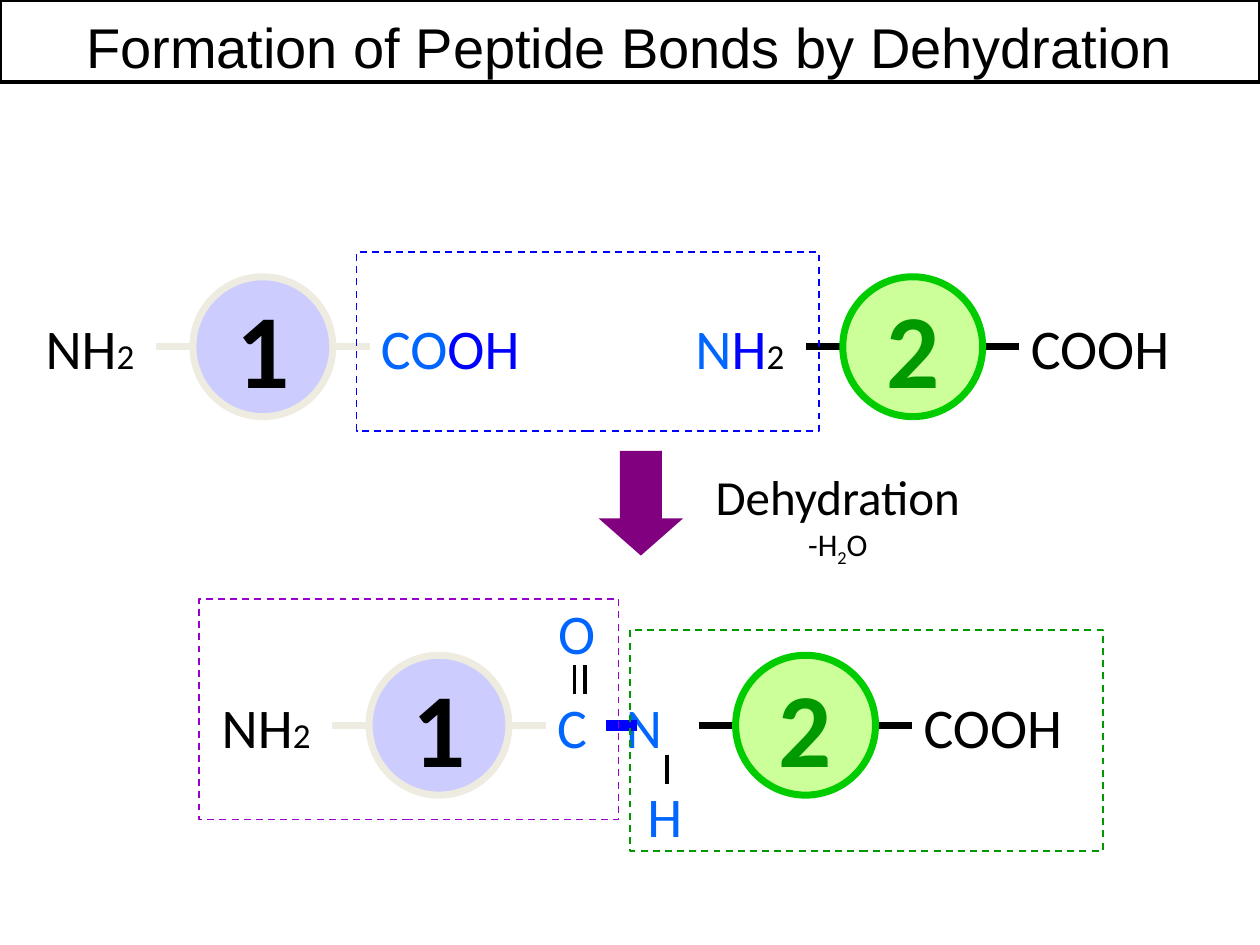
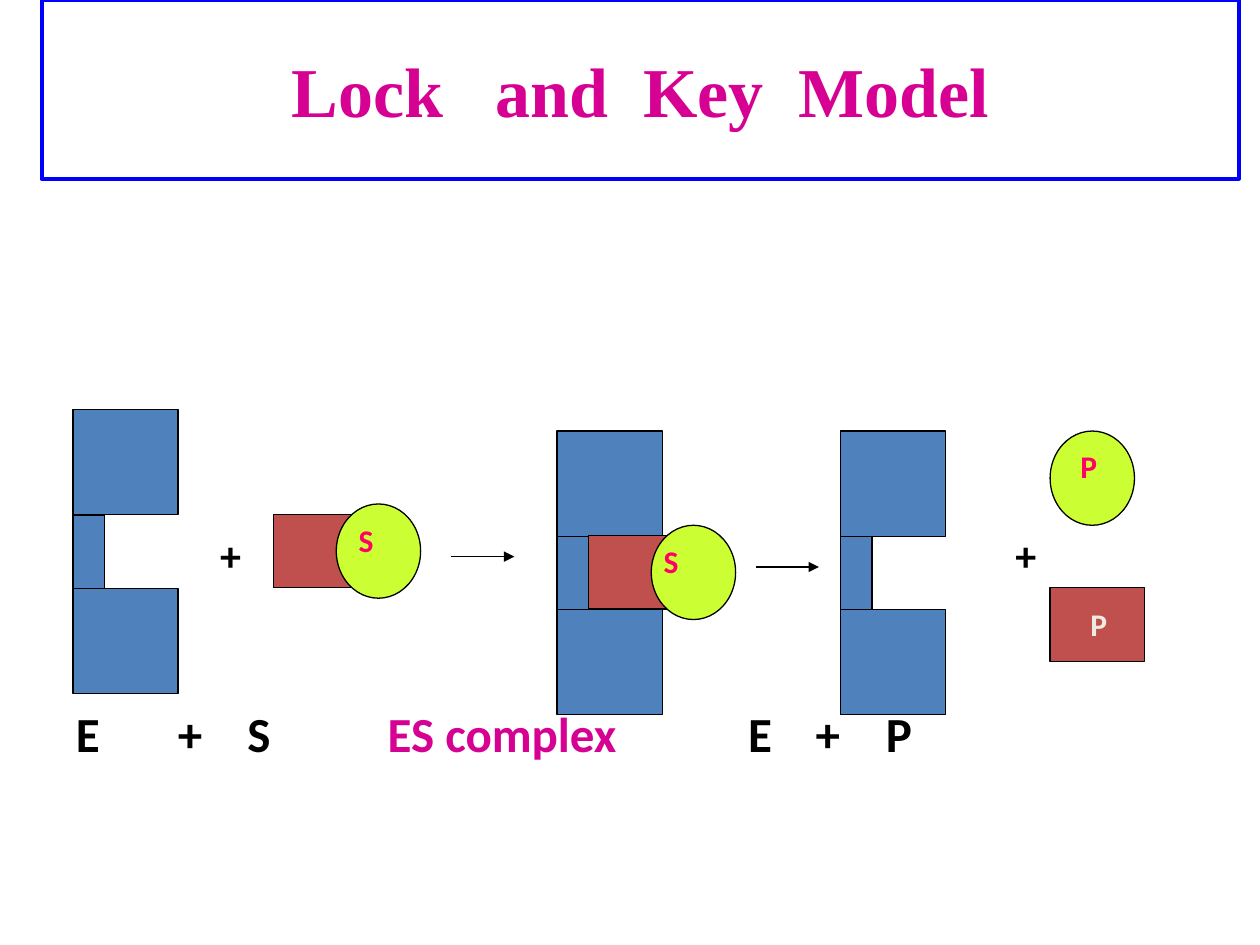
from dataclasses import dataclass

import pptx
import pptx.dml.color
import pptx.enum.dml
import pptx.enum.shapes
import pptx.enum.text
import pptx.oxml.ns
import pptx.util
from lxml import etree
from pptx.util import Cm

SHAPES = pptx.enum.shapes.MSO_SHAPE
ALIGN = pptx.enum.text.PP_ALIGN
ANCHOR = pptx.enum.text.MSO_ANCHOR
qn = pptx.oxml.ns.qn


@dataclass(frozen=True)
class Theme:
    black: str = "000000"
    white: str = "FFFFFF"
    ivory: str = "EEECE1"
    blue: str = "0000FF"
    sky: str = "0066FF"
    lavender: str = "CCCCFF"
    lime: str = "CCFF99"
    bright_green: str = "00CC00"
    green: str = "009900"
    violet: str = "9900CC"
    purple: str = "800080"
    magenta: str = "D60093"
    pink: str = "FF0066"
    enzyme: str = "4F81BD"
    substrate: str = "C0504D"
    yellow: str = "CCFF33"
    body_font: str = "Calibri"
    plain_title_font: str = "Arial"
    serif_title_font: str = "Times New Roman"
    residue_size: int = 60
    model_title_size: int = 40
    large: int = 32
    label: int = 28
    sign: int = 24
    index: int = 20
    small: int = 18


THEME = Theme()


def rgb(color):
    return pptx.dml.color.RGBColor.from_string(color)


def write(paragraph, text, *, size, color=THEME.black, font=THEME.body_font,
          bold=False, baseline=None, spacing=None):
    """Add one formatted run; baseline is in 1/1000 %, spacing in points."""
    run = paragraph.add_run()
    run.text = text
    run.font.size = pptx.util.Pt(size)
    run.font.name = font
    run.font.bold = bold
    run.font.color.rgb = rgb(color)
    if baseline is not None:
        run.font._element.set("baseline", str(baseline))
    if spacing is not None:
        run.font._element.set("spc", str(spacing * 100))


class Deck:
    """Holds the theme and the current slide. All lengths are in centimetres."""

    def __init__(self, theme):
        self.theme = theme
        self.prs = pptx.Presentation()
        self.prs.slide_width, self.prs.slide_height = Cm(25.4), Cm(19.05)
        self.slide = None

    def new_slide(self):
        self.slide = self.prs.slides.add_slide(self.prs.slide_layouts[6])

    def shape(self, kind, left, top, width, height, fill=None, line=None,
              weight=0.75, dashed=False):
        item = self.slide.shapes.add_shape(
            kind, Cm(left), Cm(top), Cm(width), Cm(height))
        item.shadow.inherit = False
        if fill:
            item.fill.solid()
            item.fill.fore_color.rgb = rgb(fill)
        else:
            item.fill.background()
        if line:
            item.line.color.rgb = rgb(line)
            item.line.width = pptx.util.Pt(weight)
        else:
            item.line.fill.background()
        if dashed:
            item.line.dash_style = pptx.enum.dml.MSO_LINE.DASH
        return item

    def line(self, x1, y1, x2, y2, color, weight, arrow=False):
        item = self.slide.shapes.add_connector(
            pptx.enum.shapes.MSO_CONNECTOR.STRAIGHT, Cm(x1), Cm(y1), Cm(x2), Cm(y2))
        item.line.color.rgb = rgb(color)
        item.line.width = pptx.util.Pt(weight)
        if arrow:
            etree.SubElement(item.line._get_or_add_ln(), qn("a:tailEnd"), type="triangle")
        etree.SubElement(item._element.spPr, qn("a:effectLst"))

    def paragraph(self, item, align=ALIGN.LEFT, anchor=ANCHOR.TOP, wrap=True):
        """Prepare the first paragraph of a shape or text box."""
        frame = item.text_frame
        frame.word_wrap = wrap
        frame.vertical_anchor = anchor
        frame.paragraphs[0].alignment = align
        return frame.paragraphs[0]

    def text(self, left, top, width, height, *runs, align=ALIGN.LEFT,
             anchor=ANCHOR.TOP):
        """Add a text box; each run is a text and its format."""
        box = self.slide.shapes.add_textbox(Cm(left), Cm(top), Cm(width), Cm(height))
        paragraph = self.paragraph(box, align, anchor)
        for text, form in runs:
            write(paragraph, text, **form)
        return box

    def centered(self, x, y, width, text, **form):
        """Add a one-line label centred on a point."""
        self.text(x - width / 2, y - 0.65, width, 1.3, (text, form),
                  align=ALIGN.CENTER, anchor=ANCHOR.MIDDLE)

    # Peptide chain parts
    def formula(self, left, top, width, *parts):
        """Add a chemical formula; each part is text, colour and optional size."""
        runs = [(text, dict(color=color, size=size[0] if size else self.theme.large))
                for text, color, *size in parts]
        self.text(left, top, width, 1.6, *runs)

    def residue(self, number, x, y, fill, outline, ink, bond):
        radius, reach = 1.41, 2.15
        self.line(x - reach, y, x + reach, y, bond, 4)
        circle = self.shape(SHAPES.OVAL, x - radius, y - radius, 2 * radius,
                            2 * radius, fill, outline, 4)
        write(self.paragraph(circle, ALIGN.CENTER, ANCHOR.MIDDLE, wrap=False), number,
              size=self.theme.residue_size, color=ink, bold=True)

    def amino_acid(self, residue, x, y, amine=None, acid=None):
        """Draw a residue with the groups at its left and right ends."""
        self.residue(*residue[:1], x, y, *residue[1:])
        if amine:
            self.formula(x - 4.63, y - 0.79, 2.51, *amine)
        if acid:
            self.formula(x + 2.13, y - 0.79, 3.89, *acid)

    # Enzyme model parts
    def enzyme(self, left, top):
        side, site_width, site_height = 2.12, 0.64, 1.48
        fill, edge = self.theme.enzyme, self.theme.black
        for y in (top, top + side + site_height):
            self.shape(SHAPES.RECTANGLE, left, y, side, side, fill, edge)
        self.shape(SHAPES.RECTANGLE, left, top + side, site_width, site_height, fill, edge)

    def block(self, left, top):
        self.shape(SHAPES.RECTANGLE, left, top, 1.9, 1.48,
                   self.theme.substrate, self.theme.black)

    def knob(self, left, top):
        self.shape(SHAPES.OVAL, left, top, 1.7, 1.9, self.theme.yellow, self.theme.black)

    def tag(self, left, top, text, color):
        self.text(left, top, 1.07, 1.27,
                  (text, dict(size=self.theme.small, color=color, bold=True)))

    def substrate(self, left, top, tag_shift):
        self.block(left, top)
        self.knob(left + 1.27, top - 0.21)
        self.tag(left + tag_shift, top, "S", self.theme.pink)


def peptide_slide(deck):
    t = deck.theme
    deck.new_slide()

    # Title band
    band = deck.shape(SHAPES.RECTANGLE, 0, 0, 25.4, 1.65, t.white, t.black, 2)
    heading = deck.paragraph(band, ALIGN.CENTER)
    heading.line_spacing = 1.1
    write(heading, "Formation of Peptide Bonds by Dehydration",
          size=t.large, font=t.plain_title_font)

    # Two separate amino acids, then the dipeptide
    first = ("1", t.lavender, t.ivory, t.black, t.ivory)
    second = ("2", t.lime, t.bright_green, t.green, t.black)
    amine = [("NH", t.black), ("2", t.black, t.index)]
    acid = [("COOH", t.black)]
    reacting_acid = [("CO", t.sky), ("OH", t.blue)]
    reacting_amine = [("N", t.sky), ("H", t.blue), ("2", t.black, t.index)]
    reactants_y, product_y = 6.99, 14.62
    deck.amino_acid(first, 5.3, reactants_y, amine, reacting_acid)
    deck.amino_acid(second, 18.4, reactants_y, reacting_amine, acid)
    deck.amino_acid(second, 16.24, product_y, acid=acid)
    deck.amino_acid(first, 8.85, product_y, amine, [("C", t.sky)])

    # Atoms and bonds of the peptide link
    for atom, left, top in (("N", 12.37, 13.83), ("O", 11, 11.94), ("H", 12.8, 15.62)):
        deck.formula(left, top, 1.37, (atom, t.sky))
    deck.line(12.22, product_y, 12.85, product_y, t.blue, 6)
    for x, top, weight in ((11.58, 13.41, 2), (11.79, 13.41, 2), (13.44, 15.21, 2.25)):
        deck.line(x, top, x, top + 0.59, t.black, weight)

    # Dashed frames
    for left, top, width, height, color in (
            (7.19, 5.08, 9.32, 3.61, t.blue),
            (4.01, 12.07, 8.46, 4.45, t.violet),
            (12.7, 12.7, 9.53, 4.45, t.green)):
        deck.shape(SHAPES.RECTANGLE, left, top, width, height, None, color, 1, True)

    # Reaction step
    arrow = deck.shape(SHAPES.DOWN_ARROW, 12.07, 9.09, 1.7, 2.11, t.purple)
    arrow.adjustments[0], arrow.adjustments[1] = 0.5, 0.44
    step = deck.text(13.97, 9.27, 5.84, 2.46, ("Dehydration", dict(size=t.label)),
                     align=ALIGN.CENTER)
    loss = step.text_frame.add_paragraph()
    loss.alignment = ALIGN.CENTER
    for text, baseline in (("-H", None), ("2", -25000), ("O", None)):
        write(loss, text, size=t.small, baseline=baseline)


def lock_and_key_slide(deck):
    t = deck.theme
    deck.new_slide()

    # Title frame, with widened word gaps
    frame = deck.shape(SHAPES.RECTANGLE, 0.84, 0, 24.13, 3.61, None, t.blue, 2.25)
    heading = deck.paragraph(frame, ALIGN.CENTER, ANCHOR.MIDDLE)
    for text, spacing in (("Lock", None), (" ", 20), ("and", None), (" ", 10),
                          ("Key", None), (" ", 10), ("Model", None)):
        write(heading, text, size=t.model_title_size, color=t.magenta,
              font=t.serif_title_font, bold=True, spacing=spacing)

    # Plus signs and the equation below the drawing
    for x in (4.65, 20.68):
        deck.centered(x, 11.19, 1.5, "+", size=t.sign, bold=True)
    for x, text in ((1.77, "E"), (3.83, "+"), (5.22, "S"),
                    (15.32, "E"), (16.69, "+"), (18.12, "P")):
        deck.centered(x, 14.77, 1.5, text, size=t.label, bold=True)
    deck.centered(10.12, 14.77, 6, "ES complex", size=t.label, color=t.magenta, bold=True)

    # Enzyme and substrate, complex, free enzyme
    for left, top in ((1.47, 8.26), (11.23, 8.69), (16.94, 8.69)):
        deck.enzyme(left, top)
    deck.substrate(5.51, 10.37, 1.47)
    deck.substrate(11.86, 10.8, 1.27)

    # Products
    deck.block(21.17, 11.85)
    deck.tag(21.73, 12.07, "P", t.ivory)
    deck.knob(21.17, 8.69)
    deck.tag(21.53, 8.89, "P", t.pink)

    # Reaction arrows
    for left, y in ((9.1, 11.22), (15.24, 11.43)):
        deck.line(left, y, left + 1.27, y, t.black, 0.75, arrow=True)


def main():
    deck = Deck(THEME)
    peptide_slide(deck)
    lock_and_key_slide(deck)
    deck.prs.save("out.pptx")


if __name__ == "__main__":
    main()
